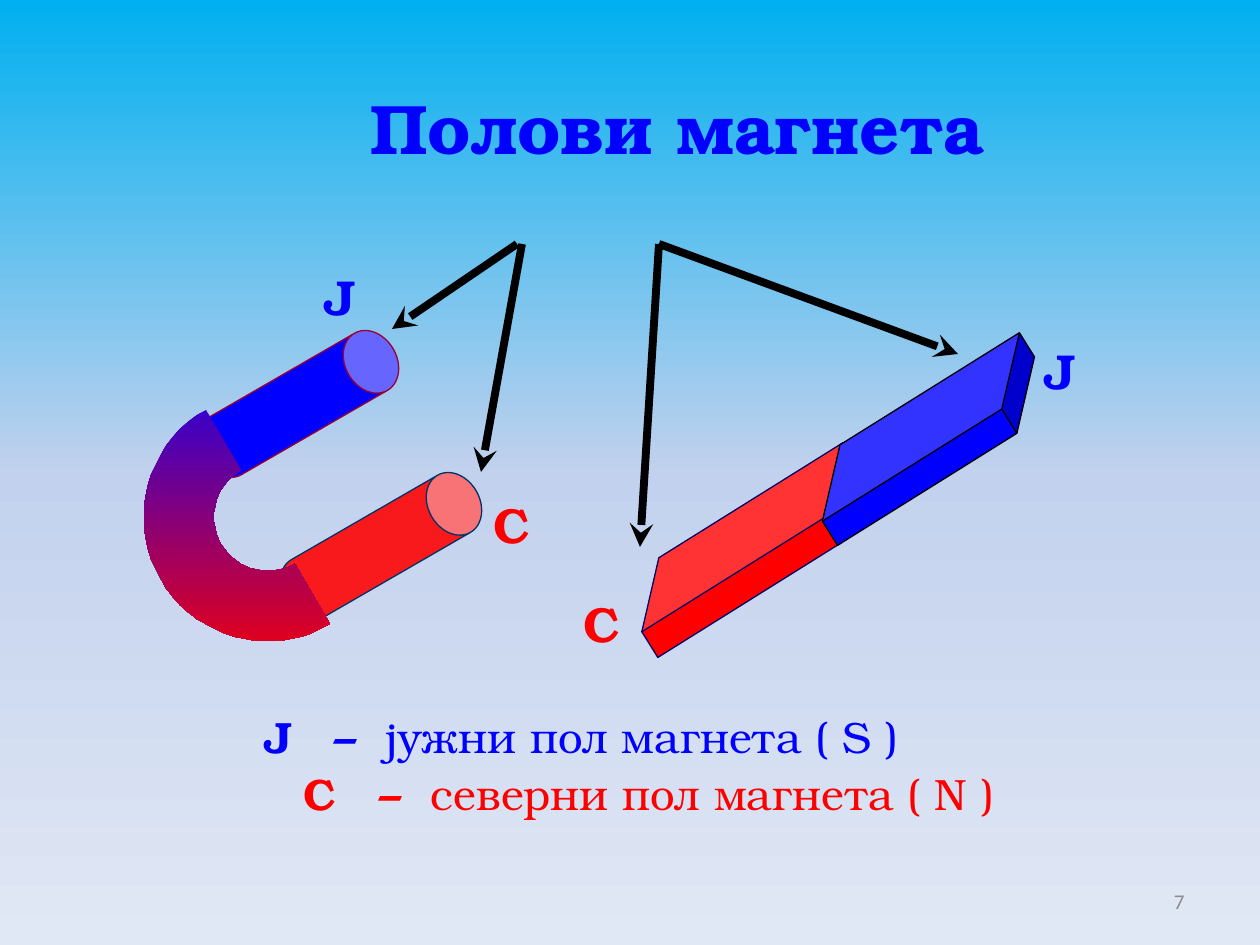
from copy import deepcopy
from dataclasses import dataclass
from math import cos, radians, sin

from lxml import etree
from pptx import Presentation
from pptx.dml.color import RGBColor
from pptx.enum.shapes import MSO_CONNECTOR, MSO_SHAPE
from pptx.enum.text import MSO_ANCHOR, MSO_AUTO_SIZE, PP_ALIGN
from pptx.oxml.ns import qn
from pptx.util import Pt

STRAIGHT = MSO_CONNECTOR.STRAIGHT
CUBE, CAN = MSO_SHAPE.CUBE, MSO_SHAPE.CAN
TOP, MIDDLE = MSO_ANCHOR.TOP, MSO_ANCHOR.MIDDLE
NO_FIT = MSO_AUTO_SIZE.NONE
LEFT, RIGHT = PP_ALIGN.LEFT, PP_ALIGN.RIGHT
SCALE = 914400 / 126


@dataclass
class Theme:
    font: str = "TeX Gyre Bonum"
    number_font: str = "Calibri"
    south: str = "0000FF"
    north: str = "FF0000"
    arrow: str = "000000"
    number: str = "8C8C8C"
    sky: tuple = ((0, "00B0F0"), (0.5, "C2D1ED"), (1, "E1E8F5"))
    bend: tuple = ("3A00C8", "DE0020")
    title_size: int = 40
    label_size: int = 28
    legend_size: int = 25
    number_size: int = 12
    edge: float = 0.75
    arrow_width: float = 4.5


theme = Theme()


def px(*lengths):
    return [round(length * SCALE) for length in lengths]


def write(box, place, runs, size, color, font=theme.font, anchor=TOP, align=LEFT):
    box.left, box.top, box.width, box.height = px(*place)
    frame = box.text_frame
    frame.word_wrap = True
    frame.auto_size = NO_FIT
    frame.vertical_anchor = anchor
    para = frame.paragraphs[0]
    para.alignment = align
    for text, bold in runs:
        span = para.add_run()
        span.text = text
        span.font.name = font
        span.font.size = Pt(size)
        span.font.bold = bold
        span.font.color.rgb = RGBColor.from_string(color)
    return para


deck = Presentation()
deck.slide_width, deck.slide_height = px(1260, 945)
page = deck.slides.add_slide(deck.slide_layouts[1])
shapes = page.shapes

sky = page.background.fill
sky.gradient()
sky.gradient_angle = 270
stop_list = next(page.element.iter(qn("a:gsLst")))
stop_list.append(deepcopy(stop_list[-1]))
for stop, (position, color) in zip(sky.gradient_stops, theme.sky):
    stop.position = position
    stop.color.rgb = RGBColor.from_string(color)

heading = write(page.placeholders[1], (358, 78, 656, 145), [("Полови магнета", True)],
                theme.title_size, theme.south)
heading.space_before = Pt(8)
properties = heading._p.get_or_add_pPr()
properties.set("marL", "0")
properties.set("indent", "0")
etree.SubElement(properties, qn("a:buNone"))

south_box = shapes.add_textbox(0, 0, 0, 0)
legend = [
    (shapes.title, (291, 746, 765, 84), "С", "северни пол магнета ( N )", theme.north, MIDDLE, (76, 127)),
    (south_box, (252, 693, 814, 84), "Ј", "јужни пол магнета ( S )", theme.south, TOP, (70, 121)),
]
for box, place, letter, meaning, color, anchor, tabs in legend:
    para = write(box, place, [(f"{letter}\t–\t", True), (meaning, False)],
                 theme.legend_size, color, anchor=anchor)
    para.line_spacing = 1.2
    tab_list = etree.SubElement(para._p.get_or_add_pPr(), qn("a:tabLst"))
    for position in px(*tabs):
        etree.SubElement(tab_list, qn("a:tab"), pos=str(position), algn="l")

magnet_parts = [
    (CUBE, (615, 508, 271, 84), 328, 0.64, theme.north, "000066", 100),
    (CUBE, (795, 397, 267, 84), 328, 0.66, theme.south, "000000", 100),
    (CAN, (348, 436, 66, 220), 60, 0.78, theme.north, "003366", 88),
    (CAN, (265, 294, 66, 220), 60, 0.78, theme.south, "990033", 100),
]
for kind, place, turn, depth, color, edge, opacity in magnet_parts:
    part = shapes.add_shape(kind, *px(*place))
    part.rotation = turn
    part.adjustments[0] = depth
    part.shadow.inherit = False
    part.fill.solid()
    part.fill.fore_color.rgb = RGBColor.from_string(color)
    part.line.color.rgb = RGBColor.from_string(edge)
    part.line.width = Pt(theme.edge)
    if opacity < 100:
        fill_color = part._element.spPr.find(qn("a:solidFill"))[0]
        etree.SubElement(fill_color, qn("a:alpha"), val=str(opacity * 1000))

center_x, center_y = 268, 517
sweep = range(60, 241, 5)
outline = [
    (center_x + radius * cos(radians(angle)), center_y + radius * sin(radians(angle)))
    for radius, angles in ((124, sweep), (54, reversed(sweep)))
    for angle in angles
]
builder = shapes.build_freeform(*outline[0], scale=SCALE)
builder.add_line_segments(outline[1:], close=True)
bend = builder.convert_to_shape()
bend.shadow.inherit = False
bend.line.fill.background()
bend.fill.gradient()
bend.fill.gradient_angle = 270
for position, (stop, color) in enumerate(zip(bend.fill.gradient_stops, theme.bend)):
    stop.position = position
    stop.color.rgb = RGBColor.from_string(color)

arrows = [
    (517, 244, 392, 329),
    (522, 244, 481, 472),
    (659, 244, 958, 354),
    (659, 244, 640, 547),
]
for ends in arrows:
    arrow = shapes.add_connector(STRAIGHT, *px(*ends))
    arrow.line.color.rgb = RGBColor.from_string(theme.arrow)
    arrow.line.width = Pt(theme.arrow_width)
    etree.SubElement(arrow.line._get_or_add_ln(), qn("a:tailEnd"), type="stealth")
    etree.SubElement(arrow._element.spPr, qn("a:effectLst"))

pole_labels = [
    ("С", (571, 587, 84, 89), theme.north, 0),
    ("Ј", (1032, 334, 69, 72), theme.south, 14),
    ("Ј", (312, 260, 69, 72), theme.south, 14),
    ("С", (481, 488, 84, 89), theme.north, 0),
]
for letter, place, color, gap in pole_labels:
    label = write(shapes.add_textbox(0, 0, 0, 0), place, [(letter, True)], theme.label_size, color)
    label.space_before = Pt(gap)

write(shapes.add_textbox(0, 0, 0, 0), (903, 876, 294, 50), [("7", False)],
      theme.number_size, theme.number, theme.number_font, MIDDLE, RIGHT)

deck.save("out.pptx")
